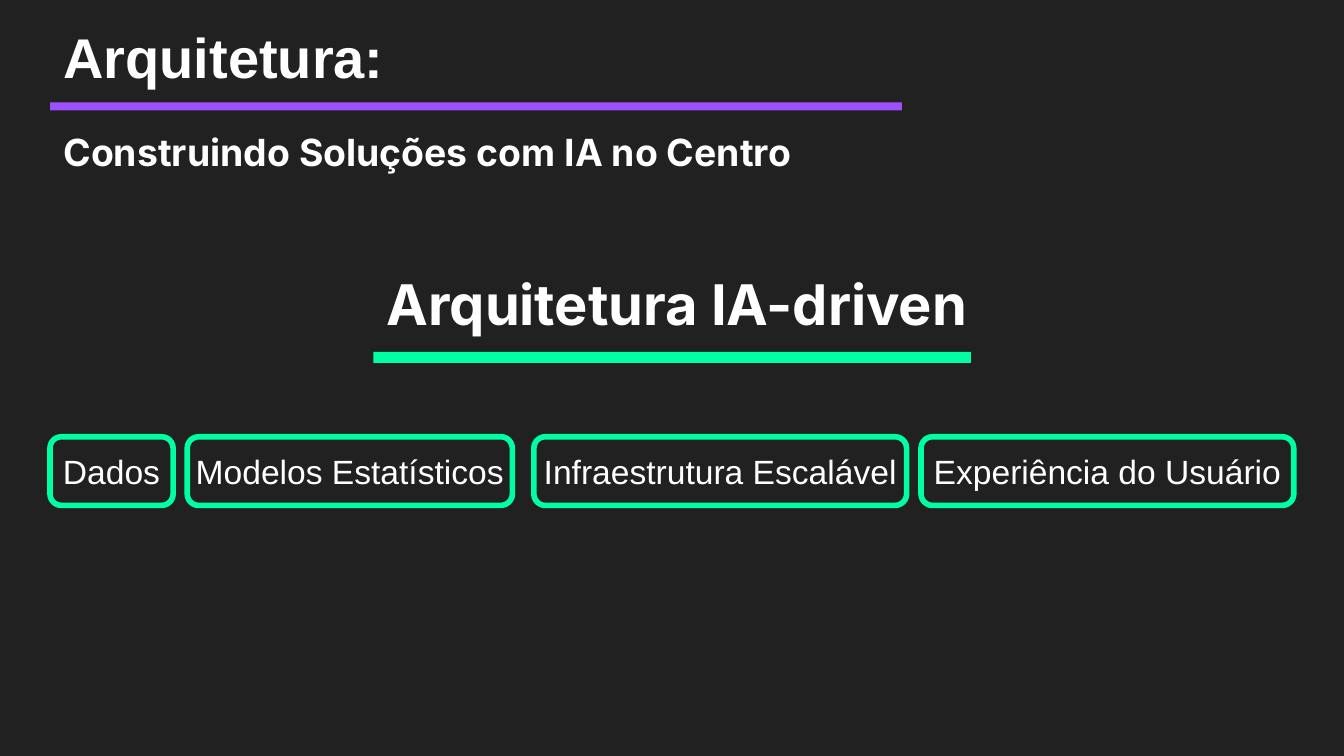
import pptx
import pptx.util
import pptx.dml.color
import pptx.enum.shapes
import pptx.enum.text

Pt = pptx.util.Pt
Kind = pptx.enum.shapes.MSO_SHAPE
Align = pptx.enum.text.PP_ALIGN
WHITE, GREEN, PURPLE, DARK = "FFFFFF", "00FFA3", "9D50FF", "212121"


def color(text):
    return pptx.dml.color.RGBColor.from_string(text)


def write(shape, text, font, size, bold, align, inset):
    """Fill a shape with one vertically centred line of white text."""
    frame = shape.text_frame
    frame.text = text
    frame.word_wrap = True
    frame.auto_size = pptx.enum.text.MSO_AUTO_SIZE.NONE
    frame.vertical_anchor = pptx.enum.text.MSO_ANCHOR.MIDDLE
    frame.margin_left = frame.margin_right = Pt(inset)
    frame.margin_top = frame.margin_bottom = Pt(inset)
    line = frame.paragraphs[0]
    line.alignment = align
    line.space_before = Pt(0)
    run = line.runs[0].font
    run.name, run.size, run.bold = font, Pt(size), bold
    run.color.rgb = color(WHITE)


deck = pptx.Presentation()
deck.slide_width, deck.slide_height = Pt(720), Pt(405)
slide = deck.slides.add_slide(deck.slide_layouts[0])
slide.background.fill.solid()
slide.background.fill.fore_color.rgb = color(DARK)

# Headings
title, sub = slide.placeholders
head = slide.shapes.add_textbox(0, 0, 0, 0)
for shape, text, font, size, box in [
    (title, "Arquitetura:", "Arial", 30, (26.8, 13, 456.4, 41.8)),
    (sub, "Construindo Soluções com IA no Centro", "Inter", 20, (26.8, 61, 451.4, 40)),
    (head, "Arquitetura IA-driven", "Inter", 30, (200, 128, 350, 69)),
]:
    shape.left, shape.top, shape.width, shape.height = map(Pt, box)
    write(shape, text, font, size, True, Align.LEFT, 7.2)
title.text_frame.paragraphs[0].line_spacing = 0.75

# Rules under the headings
for tint, box in [
    (PURPLE, (26.8, 54.8, 456.4, 4.4)),
    (GREEN, (200, 188.5, 320.2, 6)),
]:
    rule = slide.shapes.add_shape(Kind.RECTANGLE, *map(Pt, box))
    rule.shadow.inherit = False
    rule.fill.solid()
    rule.fill.fore_color.rgb = color(tint)
    rule.line.fill.background()

# Pillars of the architecture
for text, left, width in [
    ("Dados", 26.8, 66),
    ("Modelos Estatísticos", 100.3, 174.2),
    ("Infraestrutura Escalável", 286, 199.7),
    ("Experiência do Usuário", 493.4, 199.7),
]:
    card = slide.shapes.add_shape(
        Kind.ROUNDED_RECTANGLE, Pt(left), Pt(234), Pt(width), Pt(36.8))
    card.shadow.inherit = False
    card.fill.background()
    card.line.color.rgb = color(GREEN)
    card.line.width = Pt(3)
    write(card, text, "Arial", 18, False, Align.CENTER, 0)

deck.save("out.pptx")
